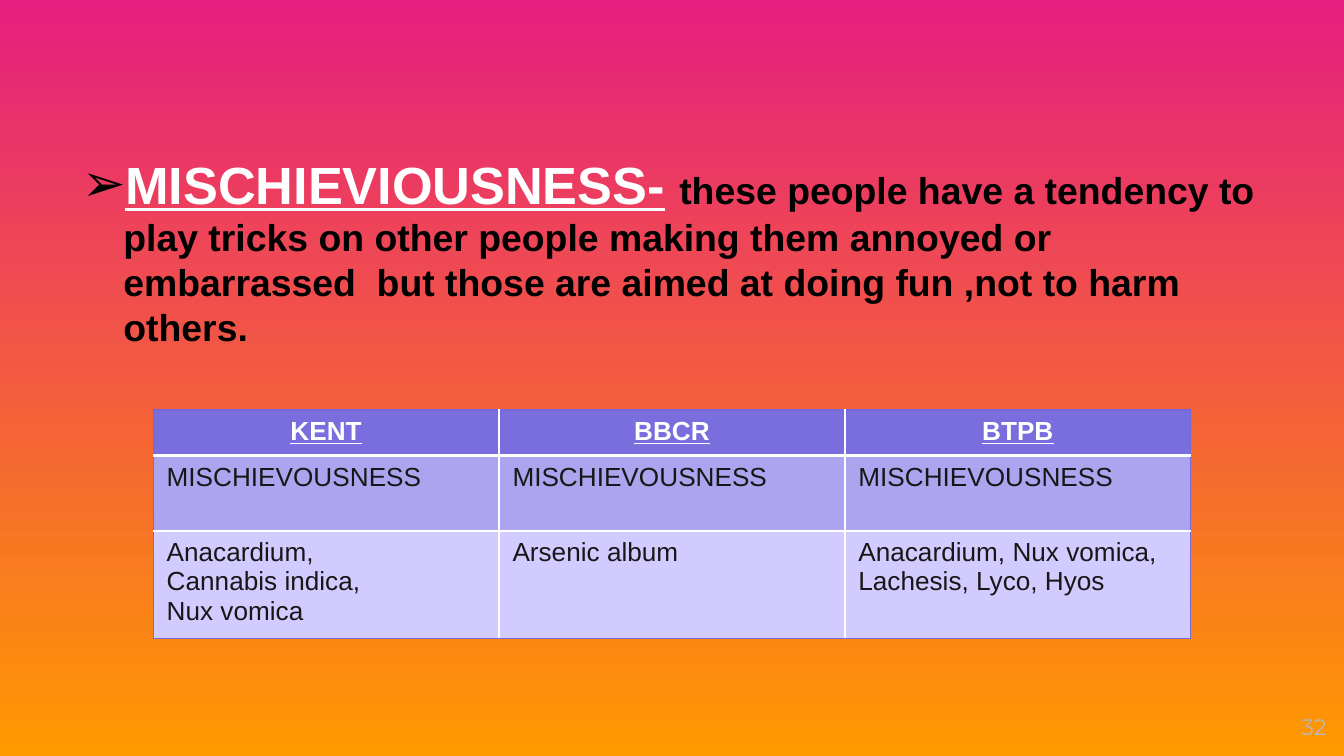
from lxml import etree
from pptx import Presentation
from pptx.dml.color import RGBColor
from pptx.enum import text
from pptx.oxml import ns
from pptx.util import Inches, Pt

COLORS = {
    "pink": "E61E7F", "orange": "FF9900", "black": "000000", "white": "FFFFFF",
    "ink": "171717", "number": "B7B7B7", "border": "7568DB",
    "header": "7A6DDD", "middle": "ADA4EF", "light": "D2CBFF",
}
HEADING = "MISCHIEVIOUSNESS-"
DEFINITION = (
    "these people have a tendency to play tricks on other people making them "
    "annoyed or embarrassed  but those are aimed at doing fun ,not to harm others."
)
PAGE_NUMBER = "32"
REMEDIES = [
    ["KENT", "BBCR", "BTPB"],
    ["MISCHIEVOUSNESS"] * 3,
    ["Anacardium,\nCannabis indica,\nNux vomica", "Arsenic album",
     "Anacardium, Nux vomica, Lachesis, Lyco, Hyos"],
]
ROW_FILLS = ["header", "middle", "light"]
ROW_HEIGHTS = [0.34, 0.56, 0.8]
TABLE_LEFT, TABLE_TOP, TABLE_WIDTH = 1.14, 3.05, 7.72


def rgb(name):
    return RGBColor.from_string(COLORS[name])


def style(font, size, color, bold=False, underline=False, name="Arial"):
    font.name, font.size = name, Pt(size)
    font.bold, font.underline = bold, underline
    font.color.rgb = rgb(color)


def add_element(parent, tag, **attributes):
    return etree.SubElement(parent, ns.qn(tag), attributes)


def add_box(page, left, top, width, height):
    box = page.shapes.add_textbox(*map(Inches, (left, top, width, height)))
    box.text_frame.word_wrap = True
    return box.text_frame


def add_bullet(paragraph, indent):
    properties = paragraph._p.get_or_add_pPr()
    properties.set("marL", str(Inches(indent)))
    properties.set("indent", str(-Inches(indent)))
    color = add_element(properties, "a:buClr")
    add_element(color, "a:srgbClr", val=COLORS["black"])
    add_element(properties, "a:buFont", typeface="Arial")
    add_element(properties, "a:buChar", char="➢")


def set_borders(cell, edges):
    properties = cell._tc.get_or_add_tcPr()
    for position, (side, (color, width)) in enumerate(edges.items()):
        line = etree.Element(ns.qn(f"a:ln{side}"), w=str(Pt(width)))
        fill = add_element(line, "a:solidFill")
        add_element(fill, "a:srgbClr", val=COLORS[color])
        properties.insert(position, line)


def add_definition(page):
    frame = add_box(page, 0.51, 1.08, 8.98, 1.58)
    frame.auto_size = text.MSO_AUTO_SIZE.SHAPE_TO_FIT_TEXT
    paragraph = frame.paragraphs[0]
    add_bullet(paragraph, 0.31)
    for wording, size, color, underline in [
        (HEADING, 28, "white", True),
        (" ", 28, "black", False),
        (DEFINITION, 20, "black", False),
    ]:
        span = paragraph.add_run()
        span.text = wording
        style(span.font, size, color, True, underline)


def add_remedies(page):
    columns = len(REMEDIES[0])
    table = page.shapes.add_table(
        len(REMEDIES), columns, Inches(TABLE_LEFT), Inches(TABLE_TOP),
        Inches(TABLE_WIDTH), Inches(sum(ROW_HEIGHTS))).table
    for column in table.columns:
        column.width = Inches(TABLE_WIDTH / columns)
    for index, wordings in enumerate(REMEDIES):
        table.rows[index].height = Inches(ROW_HEIGHTS[index])
        header = index == 0
        for position, wording in enumerate(wordings):
            cell = table.cell(index, position)
            cell.text_frame.text = wording
            cell.fill.solid()
            cell.fill.fore_color.rgb = rgb(ROW_FILLS[index])
            sides = ("L" if position == 0 else "") + "R" + ("T" if header else "") + "B"
            edges = dict.fromkeys(sides, ("border", 0.75))
            if header:
                edges["B"] = ("white", 2)
            set_borders(cell, edges)
            for paragraph in cell.text_frame.paragraphs:
                paragraph.alignment = text.PP_ALIGN.CENTER if header else text.PP_ALIGN.LEFT
                style(paragraph.runs[0].font, 14, "white" if header else "ink", header, header)


def add_page_number(page):
    frame = add_box(page, 9.27, 5.19, 0.6, 0.43)
    frame.margin_left = frame.margin_right = frame.margin_top = frame.margin_bottom = 0
    frame.vertical_anchor = text.MSO_ANCHOR.MIDDLE
    frame.text = PAGE_NUMBER
    paragraph = frame.paragraphs[0]
    paragraph.alignment = text.PP_ALIGN.RIGHT
    style(paragraph.runs[0].font, 12, "number", name="Montserrat")


def main():
    deck = Presentation()
    deck.slide_width, deck.slide_height = Inches(10), Inches(10 * 9 / 16)
    page = deck.slides.add_slide(deck.slide_layouts[6])
    backdrop = page.background.fill
    backdrop.gradient()
    backdrop.gradient_angle = 270
    for stop, color in zip(backdrop.gradient_stops, ("pink", "orange")):
        stop.color.rgb = rgb(color)
    add_page_number(page)
    add_definition(page)
    add_remedies(page)
    deck.save("out.pptx")


if __name__ == "__main__":
    main()
